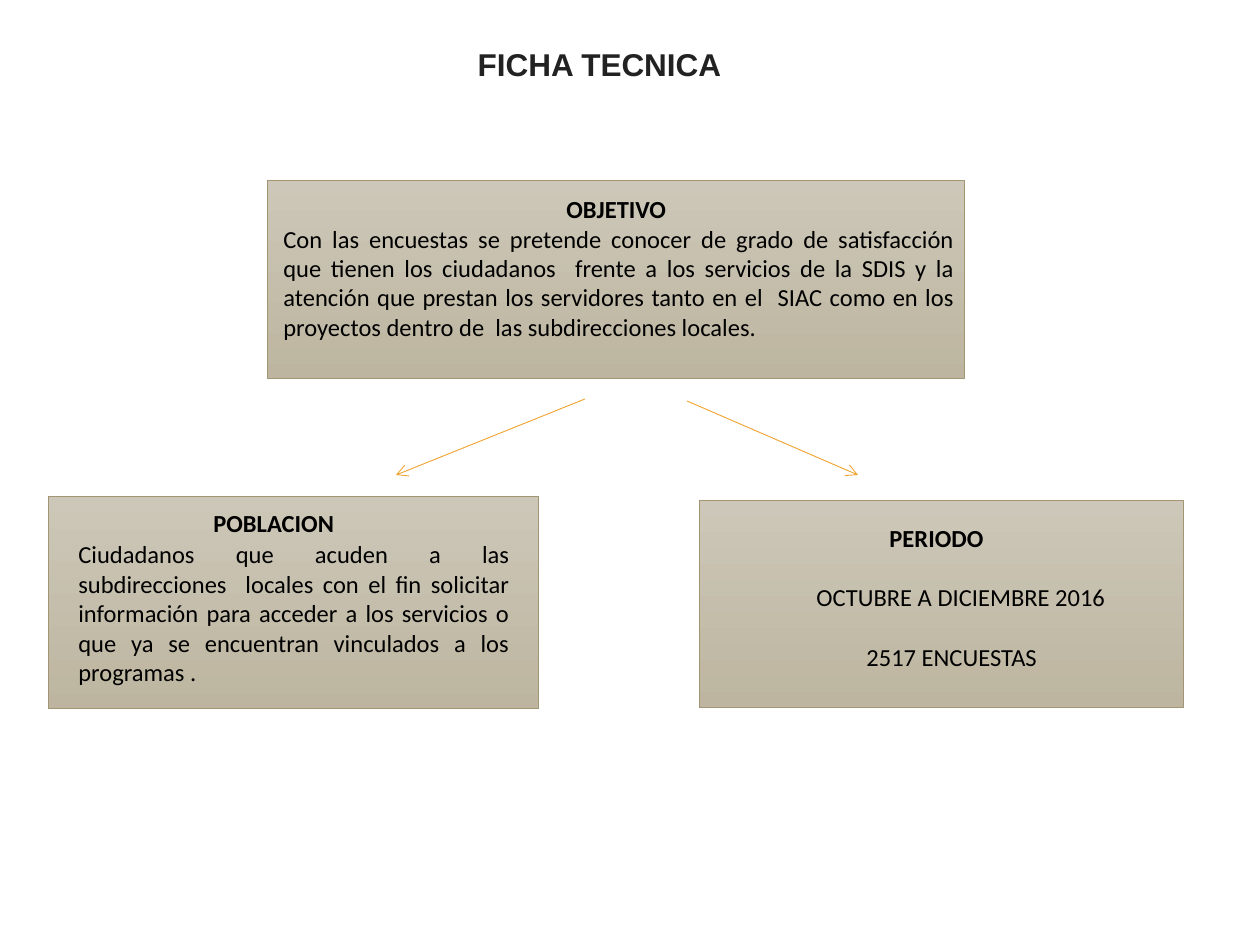
from lxml.etree import SubElement
from pptx import Presentation
from pptx.dml.color import RGBColor
from pptx.enum.shapes import MSO_CONNECTOR as Connector, MSO_SHAPE as Shape
from pptx.enum.text import MSO_ANCHOR as Anchor, MSO_AUTO_SIZE as AutoSize, PP_ALIGN as Align
from pptx.oxml.ns import qn
from pptx.util import Pt

SCALE = 914400 / 126
BLACK, TITLE, BORDER, ARROW = "000000", "222222", "A19574", "F0A22E"
GRADIENT = ("CDC7B9", "BDB59F")


def px(length):
    """Turn pixels into EMU."""
    return round(length * SCALE)


def color(value):
    """Turn a hex string into a colour."""
    return RGBColor.from_string(value)


def add_run(paragraph, text, size, font, hue, bold=False):
    """Add one formatted run."""
    run = paragraph.add_run()
    run.text = text
    run.font.name, run.font.size, run.font.bold = font, Pt(size), bold
    run.font.color.rgb = color(hue)


def add_title(slide, box, text):
    """Place and format the title placeholder."""
    title = slide.shapes.title
    title.left, title.top, title.width, title.height = map(px, box)
    frame = title.text_frame
    frame.word_wrap, frame.auto_size = True, AutoSize.NONE
    frame.vertical_anchor = Anchor.MIDDLE
    paragraph = frame.paragraphs[0]
    paragraph.alignment = Align.LEFT
    add_run(paragraph, text, 18, "Arial", TITLE, True)


def add_panel(slide, box):
    """Draw a gradient rectangle."""
    panel = slide.shapes.add_shape(Shape.RECTANGLE, *map(px, box))
    panel.shadow.inherit = False
    panel.fill.gradient()
    panel.fill.gradient_angle = 270
    for stop, hue in zip(panel.fill.gradient_stops, GRADIENT):
        stop.color.rgb = color(hue)
    panel.line.color.rgb = color(BORDER)
    panel.line.width = Pt(0.5)


def add_card(slide, box, text_box, lines, gap=0):
    """Draw a panel and its text, given as (text, indent) with the heading first."""
    add_panel(slide, box)
    left, top, width, height = text_box
    area = slide.shapes.add_textbox(px(box[0] + left), px(box[1] + top), px(width), px(height))
    frame = area.text_frame
    frame.word_wrap = True
    for index, (text, indent) in enumerate(lines):
        paragraph = frame.add_paragraph() if index else frame.paragraphs[0]
        paragraph.alignment = Align.LEFT if indent else Align.JUSTIFY
        if indent:
            paragraph._p.get_or_add_pPr().set("indent", str(px(indent)))
        if index:
            paragraph.space_before = Pt(gap)
        add_run(paragraph, text, 14, "Calibri", BLACK, index == 0)


def add_arrow(slide, start, end):
    """Draw a thin line with an open arrowhead at its end."""
    arrow = slide.shapes.add_connector(Connector.STRAIGHT, *map(px, start + end))
    arrow.line.color.rgb = color(ARROW)
    arrow.line.width = Pt(0.5)
    SubElement(arrow.line._get_or_add_ln(), qn("a:tailEnd"), type="arrow")
    SubElement(arrow._element.spPr, qn("a:effectLst"))


def main():
    """Build and save the slide."""
    presentation = Presentation()
    presentation.slide_width, presentation.slide_height = px(1260), px(945)
    slide = presentation.slides.add_slide(presentation.slide_layouts[5])
    add_title(slide, (465, 39, 719, 50), "FICHA TECNICA")
    add_card(slide, (267, 180, 697, 199), (4, 8, 696, 161), [
        ("OBJETIVO", 283),
        ("Con las encuestas se pretende conocer de grado de satisfacción que tienen los "
         "ciudadanos  frente a los servicios de la SDIS y la atención que prestan los "
         "servidores tanto en el  SIAC como en los proyectos dentro de  las "
         "subdirecciones locales.", 0)])
    add_card(slide, (48, 496, 491, 213), (18, 6, 456, 384), [
        ("POBLACION", 135),
        ("Ciudadanos que acuden a las subdirecciones  locales con el fin solicitar "
         "información para acceder a los servicios o que ya se encuentran vinculados a "
         "los programas .", 0)], gap=1)
    add_card(slide, (699, 500, 484, 208), (23, 17, 432, 339), [
        ("PERIODO", 155),
        ("OCTUBRE A DICIEMBRE 2016", 82),
        ("2517 ENCUESTAS", 132)], gap=17)
    add_arrow(slide, (585, 399), (396, 475))
    add_arrow(slide, (687, 401), (858, 475))
    presentation.save("out.pptx")


if __name__ == "__main__":
    main()
